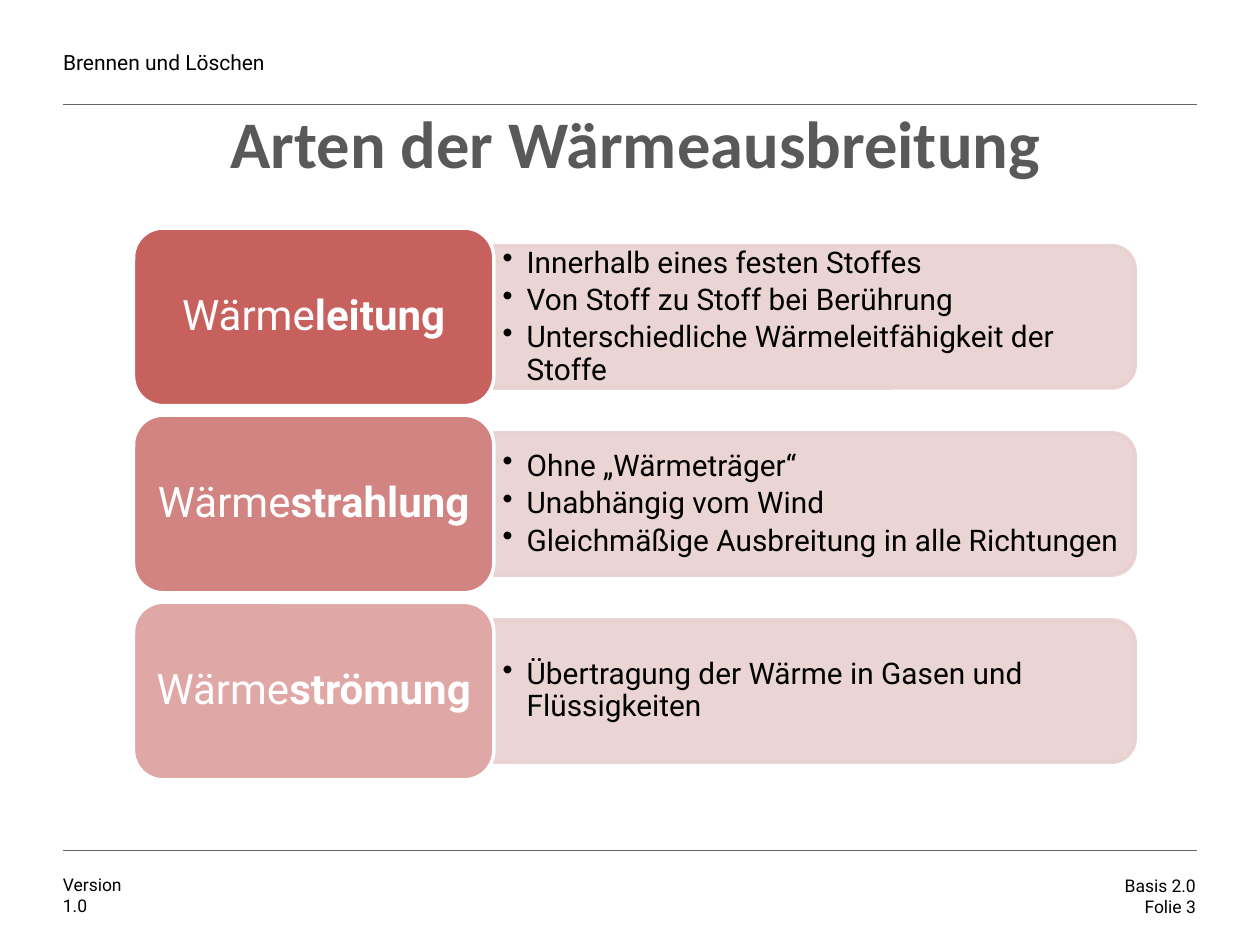
from lxml.etree import SubElement
from pptx import Presentation
from pptx.dml.color import RGBColor
from pptx.enum.shapes import MSO_CONNECTOR, MSO_SHAPE
from pptx.enum.text import MSO_ANCHOR as Anchor, PP_ALIGN as Align
from pptx.oxml.ns import qn
from pptx.util import Inches, Pt

RED, PINK, WHITE, BLACK = "C0504D", "E8D0D0", "FFFFFF", "000000"
TOPICS = [
    ("leitung", 90, ["Innerhalb eines festen Stoffes",
                     "Von Stoff zu Stoff bei Berührung",
                     "Unterschiedliche Wärmeleitfähigkeit der Stoffe"]),
    ("strahlung", 70, ["Ohne „Wärmeträger“",
                       "Unabhängig vom Wind",
                       "Gleichmäßige Ausbreitung in alle Richtungen"]),
    ("strömung", 50, ["Übertragung der Wärme in Gasen und Flüssigkeiten"]),
]


def color(hex_code):
    """Turn a hex string into a colour."""
    return RGBColor.from_string(hex_code)


def add_span(para, text, size, hex_code, bold=False, font="Roboto"):
    """Add one formatted run to a paragraph."""
    span = para.add_run()
    span.text = text
    span.font.name = font
    span.font.size = Pt(size)
    span.font.bold = bold
    span.font.color.rgb = color(hex_code)


def set_frame(shape, anchor, side=0, edge=0):
    """Set wrapping, anchor and margins of a shape's text and return its frame."""
    frame = shape.text_frame
    frame.word_wrap = True
    frame.vertical_anchor = anchor
    frame.margin_left = frame.margin_right = Inches(side)
    frame.margin_top = frame.margin_bottom = Inches(edge)
    return frame


def next_para(frame, index):
    """Return the first paragraph of a frame, or a new one after it."""
    return frame.add_paragraph() if index else frame.paragraphs[0]


def add_lines(page, box, lines, size, align=Align.LEFT):
    """Place a small text block of the page frame."""
    shape = page.shapes.add_textbox(*map(Inches, box))
    frame = set_frame(shape, Anchor.MIDDLE)
    for index, line in enumerate(lines):
        para = next_para(frame, index)
        para.alignment = align
        add_span(para, line, size, BLACK)


def add_rule(page, left, top, width):
    """Draw a thin horizontal rule."""
    rule = page.shapes.add_connector(
        MSO_CONNECTOR.STRAIGHT, Inches(left), Inches(top),
        Inches(left + width), Inches(top))
    rule.line.color.rgb = color("646464")
    rule.line.width = Pt(0.25)
    SubElement(rule._element.spPr, qn("a:effectLst"))


def add_block(page, kind, box, fill, line, fill_alpha, line_alpha=100):
    """Draw a rounded block with a translucent fill."""
    block = page.shapes.add_shape(kind, *map(Inches, box))
    block.shadow.inherit = False
    block.fill.solid()
    block.fill.fore_color.rgb = color(fill)
    block.line.color.rgb = color(line)
    block.line.width = Pt(2)
    properties = block._element.spPr
    for path, alpha in (("a:solidFill", fill_alpha), ("a:ln/a:solidFill", line_alpha)):
        tags = "/".join(qn(tag) for tag in path.split("/"))
        tone = properties.find(f"{tags}/{qn('a:srgbClr')}")
        SubElement(tone, qn("a:alpha"), val=str(alpha * 1000))
    return block


def add_bullets(page, box, points):
    """Write the bullet list of one topic."""
    frame = set_frame(page.shapes.add_textbox(*map(Inches, box)), Anchor.MIDDLE, 0.07, 0.04)
    for index, point in enumerate(points):
        para = next_para(frame, index)
        properties = para._p.get_or_add_pPr()
        properties.set("marL", str(Inches(0.19)))
        properties.set("indent", str(-Inches(0.19)))
        SubElement(properties, qn("a:buChar"), char="•")
        para.line_spacing = 0.9
        para.space_after = Pt(3)
        add_span(para, point, 17, BLACK)


def add_topic(page, box, ending, alpha, points):
    """Place one topic: a name block on the left and its panel on the right."""
    left, top, width, height = box
    name_width, panel_height = 2.86, 1.13
    panel_left, panel_width = left + name_width, width - name_width
    middle = top + height / 2
    panel_box = (panel_left + (panel_width - panel_height) / 2,
                 middle - panel_width / 2, panel_height, panel_width)
    panel = add_block(page, MSO_SHAPE.ROUND_2_SAME_RECTANGLE, panel_box, PINK, PINK, 90, 90)
    panel.rotation = 90
    add_bullets(page, (panel_left, middle - 0.51, panel_width - 0.05, 1.02), points)

    name = add_block(page, MSO_SHAPE.ROUNDED_RECTANGLE,
                     (left, top, name_width, height), RED, WHITE, alpha)
    para = set_frame(name, Anchor.MIDDLE, 0.05, 0.05).paragraphs[0]
    para.alignment = Align.CENTER
    para.line_spacing = 0.9
    add_span(para, "Wärme", 24, WHITE)
    add_span(para, ending, 24, WHITE, bold=True)


def add_topics(page, box):
    """Stack the topics at equal gaps in the given box."""
    left, top, width, height = box
    row_height = 1.41
    step = (height - row_height) / (len(TOPICS) - 1)
    for index, topic in enumerate(TOPICS):
        add_topic(page, (left, top + index * step, width, row_height), *topic)


def add_title(page, box):
    """Move and format the title placeholder."""
    title = page.shapes.title
    title.left, title.top, title.width, title.height = map(Inches, box)
    para = set_frame(title, Anchor.TOP, 0.1, 0.05).paragraphs[0]
    para.alignment = Align.CENTER
    add_span(para, "Arten der Wärmeausbreitung", 38, "595959", True, "Calibri")


def add_page_frame(page, left, width):
    """Place the header and footer with their rules."""
    add_rule(page, left, 0.83, width)
    add_lines(page, (left, 0.33, 6.08, 0.33), ["Brennen und Löschen"], 12)
    add_rule(page, left, 6.75, width)
    add_lines(page, (left, 6.88, 0.56, 0.44), ["Version", "1.0"], 10)
    add_lines(page, (left + width - 1.43, 6.89, 1.42, 0.44),
              ["Basis 2.0", "Folie 3"], 10, Align.RIGHT)


def main():
    """Build and save the deck."""
    deck = Presentation()
    deck.slide_width, deck.slide_height = Inches(10), Inches(7.5)
    page = deck.slides.add_slide(deck.slide_layouts[5])
    add_page_frame(page, 0.5, 9)
    add_title(page, (1.46, 0.76, 7.17, 0.67))
    add_topics(page, (1.06, 1.81, 7.95, 4.38))
    deck.save("out.pptx")


if __name__ == "__main__":
    main()
